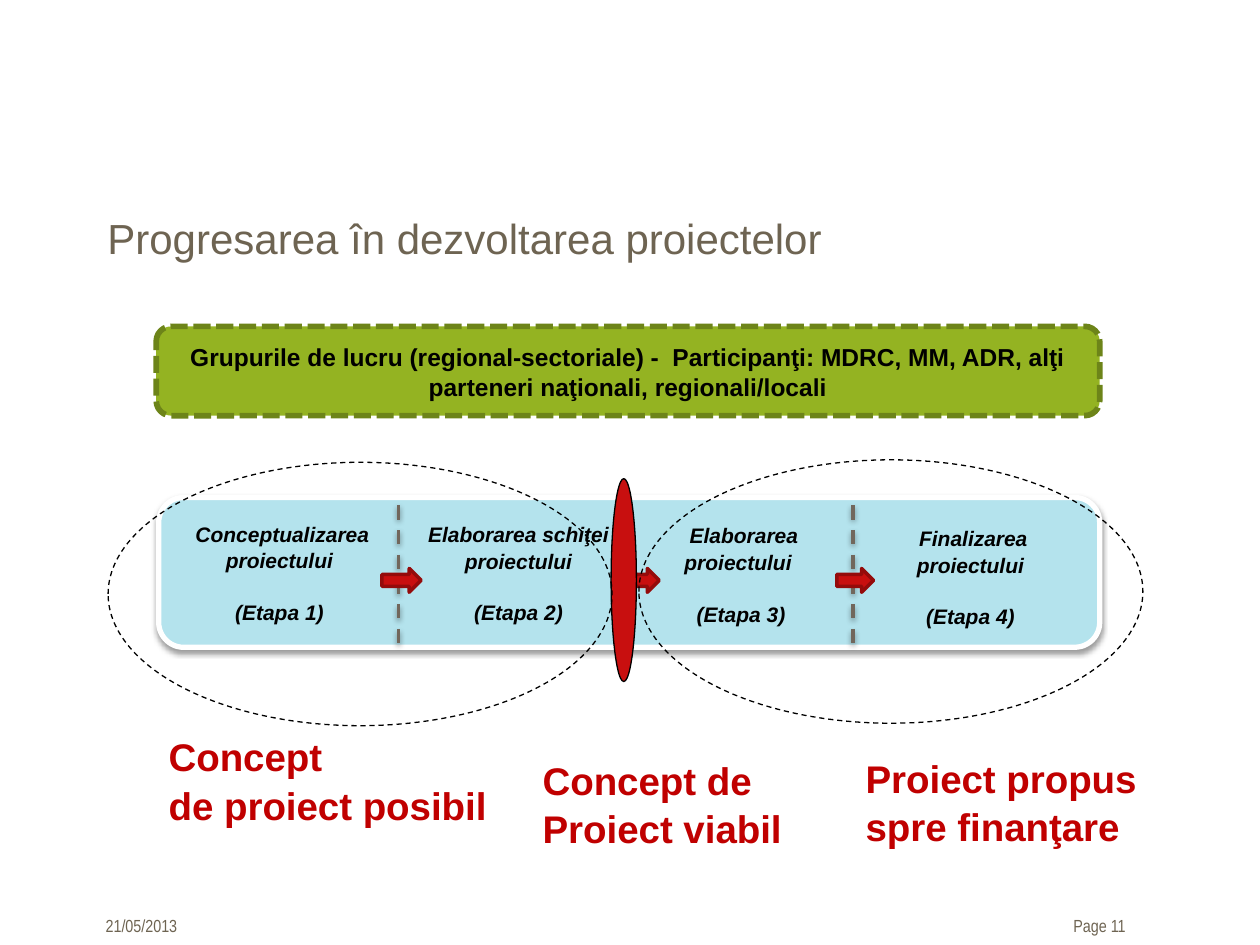
from dataclasses import dataclass

import pptx
import pptx.dml.color
import pptx.enum.dml
import pptx.enum.shapes
import pptx.enum.text
import pptx.oxml
import pptx.oxml.ns
import pptx.util

Cm = pptx.util.Cm
Pt = pptx.util.Pt
SHAPE = pptx.enum.shapes.MSO_SHAPE
DASH = pptx.enum.dml.MSO_LINE
ALIGN = pptx.enum.text.PP_ALIGN
ANCHOR = pptx.enum.text.MSO_ANCHOR


@dataclass(frozen=True)
class Theme:
    font: str = "Arial"
    footer_font: str = "Arial Narrow"
    brown: str = "6E6452"
    black: str = "000000"
    white: str = "FFFFFF"
    green: str = "94B322"
    dark_green: str = "6D8419"
    light_blue: str = "B4E3ED"
    divider: str = "71675C"
    red: str = "C80F0F"
    dark_red: str = "940B0B"
    label_red: str = "C00000"
    title_size: int = 24
    label_size: int = 22
    banner_size: int = 14
    stage_size: int = 12
    footer_size: int = 10
    line_spacing: float = 1.05


THEME = Theme()

STAGES = [
    (" Conceptualizarea proiectului", (3.30, 10.24, 4.67, 3.40), 0.08),
    ("Elaborarea schiţei proiectului", (8.03, 10.21, 4.85, 4.17), 0.08),
    (" Elaborarea proiectului ", (13.06, 10.26, 3.76, 3.58), 0.08),
    (" Finalizarea proiectului", (17.48, 10.21, 4.17, 3.12), 0.21),
]
DIVIDERS = [(8.03, 10.19), (12.62, 10.13), (17.20, 10.19)]
ARROWS = [(7.70, 0.79), (12.50, 0.79), (16.87, 0.74)]
SCOPES = [(2.18, 9.32), (12.88, 9.27)]
LABELS = [
    (("Concept de", "Proiect viabil"), (10.69, 15.09, 5.41, 2.13)),
    (("Concept", "de proiect posibil"), (3.15, 14.61, 7.01, 2.13)),
    (("Proiect propus", "spre finanţare"), (17.20, 15.04, 6.27, 2.13)),
]
FOOTERS = [
    ("21/05/2013", (1.88, 18.29, 3.61, 0.69)),
    ("Page 11", (21.39, 18.29, 2.57, 0.69)),
]


def rgb(color):
    return pptx.dml.color.RGBColor.from_string(color)


def lengths(values):
    return [Cm(value) for value in values]


def write(frame, lines, size, color, font=THEME.font, bold=False, italic=False,
          align=ALIGN.LEFT, gap=0):
    """Put each line in its own paragraph, with gap points between them."""
    for index, line in enumerate(lines):
        paragraph = frame.add_paragraph() if index else frame.paragraphs[0]
        paragraph.alignment = align
        paragraph.line_spacing = THEME.line_spacing
        paragraph.space_before = Pt(gap if index else 0)
        run = paragraph.add_run()
        run.text = line
        run.font.name = font
        run.font.size = Pt(size)
        run.font.bold = bold
        run.font.italic = italic
        run.font.color.rgb = rgb(color)


def set_effects(shape, shadow=False):
    """Replace the theme effect by a soft drop shadow or by none."""
    properties = shape._element.spPr
    for effects in properties.findall(pptx.oxml.ns.qn("a:effectLst")):
        properties.remove(effects)
    outer = (
        '<a:outerShdw blurRad="40000" dist="20000" dir="5400000" rotWithShape="0">'
        f'<a:srgbClr val="{THEME.black}"><a:alpha val="38000"/></a:srgbClr>'
        "</a:outerShdw>"
    ) if shadow else ""
    properties.append(pptx.oxml.parse_xml(
        f'<a:effectLst {pptx.oxml.ns.nsdecls("a")}>{outer}</a:effectLst>'))


def style_line(line, color, width, dash=None):
    line.color.rgb = rgb(color)
    line.width = Pt(width)
    if dash is not None:
        line.dash_style = dash


def add_preset(slide, kind, box, fill=None, line=None, shadow=False):
    shape = slide.shapes.add_shape(kind, *lengths(box))
    set_effects(shape, shadow)
    if fill:
        shape.fill.solid()
        shape.fill.fore_color.rgb = rgb(fill)
    else:
        shape.fill.background()
    if line:
        style_line(shape.line, *line)
    else:
        shape.line.fill.background()
    return shape


def prepare_frame(shape, anchor, top=0.08):
    frame = shape.text_frame
    frame.word_wrap = True
    frame.vertical_anchor = anchor
    frame.margin_left = frame.margin_right = Cm(0.15)
    frame.margin_top, frame.margin_bottom = Cm(top), Cm(0.08)
    return frame


def add_title(slide, text):
    title = slide.shapes.title
    title.left, title.top, title.width, title.height = lengths((1.91, 4.11, 21.59, 1.73))
    title.text_frame.vertical_anchor = ANCHOR.TOP
    write(title.text_frame, [text], THEME.title_size, THEME.brown)


def add_banner(slide, text):
    banner = add_preset(slide, SHAPE.ROUNDED_RECTANGLE, (3.15, 6.58, 19.02, 1.80),
                        THEME.green, (THEME.dark_green, 3.25, DASH.SQUARE_DOT))
    write(prepare_frame(banner, ANCHOR.MIDDLE), [text], THEME.banner_size,
          THEME.black, bold=True, align=ALIGN.CENTER)


def add_stage(slide, number, name, box, top):
    stage = add_preset(slide, SHAPE.ROUNDED_RECTANGLE, box)
    write(prepare_frame(stage, ANCHOR.TOP, top), [name, f"(Etapa {number})"],
          THEME.stage_size, THEME.black, bold=True, italic=True,
          align=ALIGN.CENTER, gap=14.5)


def add_divider(slide, left, top):
    divider = slide.shapes.add_connector(
        pptx.enum.shapes.MSO_CONNECTOR.STRAIGHT, *lengths((left, top, left, top + 2.90)))
    style_line(divider.line, THEME.divider, 2, DASH.DASH)
    set_effects(divider, shadow=True)


def add_text(slide, lines, box, size, color, wrap=True, **style):
    frame = slide.shapes.add_textbox(*lengths(box)).text_frame
    frame.word_wrap = wrap
    write(frame, lines, size, color, **style)


def main():
    presentation = pptx.Presentation()
    presentation.slide_width, presentation.slide_height = Cm(25.4), Cm(19.05)
    slide = presentation.slides.add_slide(presentation.slide_layouts[5])

    add_title(slide, "Progresarea în dezvoltarea proiectelor")
    for text, box in FOOTERS:
        add_text(slide, [text], box, THEME.footer_size, THEME.brown, font=THEME.footer_font)
    add_banner(slide, "Grupurile de lucru (regional-sectoriale) -  Participanţi: "
                      "MDRC, MM, ADR, alţi parteneri naţionali, regionali/locali")

    add_preset(slide, SHAPE.ROUNDED_RECTANGLE, (3.20, 10.03, 18.97, 3.02),
               THEME.light_blue, (THEME.white, 3), shadow=True)
    for number, (name, box, top) in enumerate(STAGES, start=1):
        add_stage(slide, number, name, box, top)
    for left, top in DIVIDERS:
        add_divider(slide, left, top)
    for left, width in ARROWS:
        add_preset(slide, SHAPE.RIGHT_ARROW, (left, 11.46, width, 0.48),
                   THEME.red, (THEME.dark_red, 2))

    add_preset(slide, SHAPE.OVAL, (12.32, 9.65, 0.51, 4.09), THEME.red, (THEME.black, 0.75))
    for left, top in SCOPES:
        add_preset(slide, SHAPE.OVAL, (left, top, 10.16, 5.31),
                   line=(THEME.black, 0.75, DASH.DASH))
    for lines, box in LABELS:
        add_text(slide, lines, box, THEME.label_size, THEME.label_red, wrap=False, bold=True)

    presentation.save("out.pptx")


if __name__ == "__main__":
    main()
